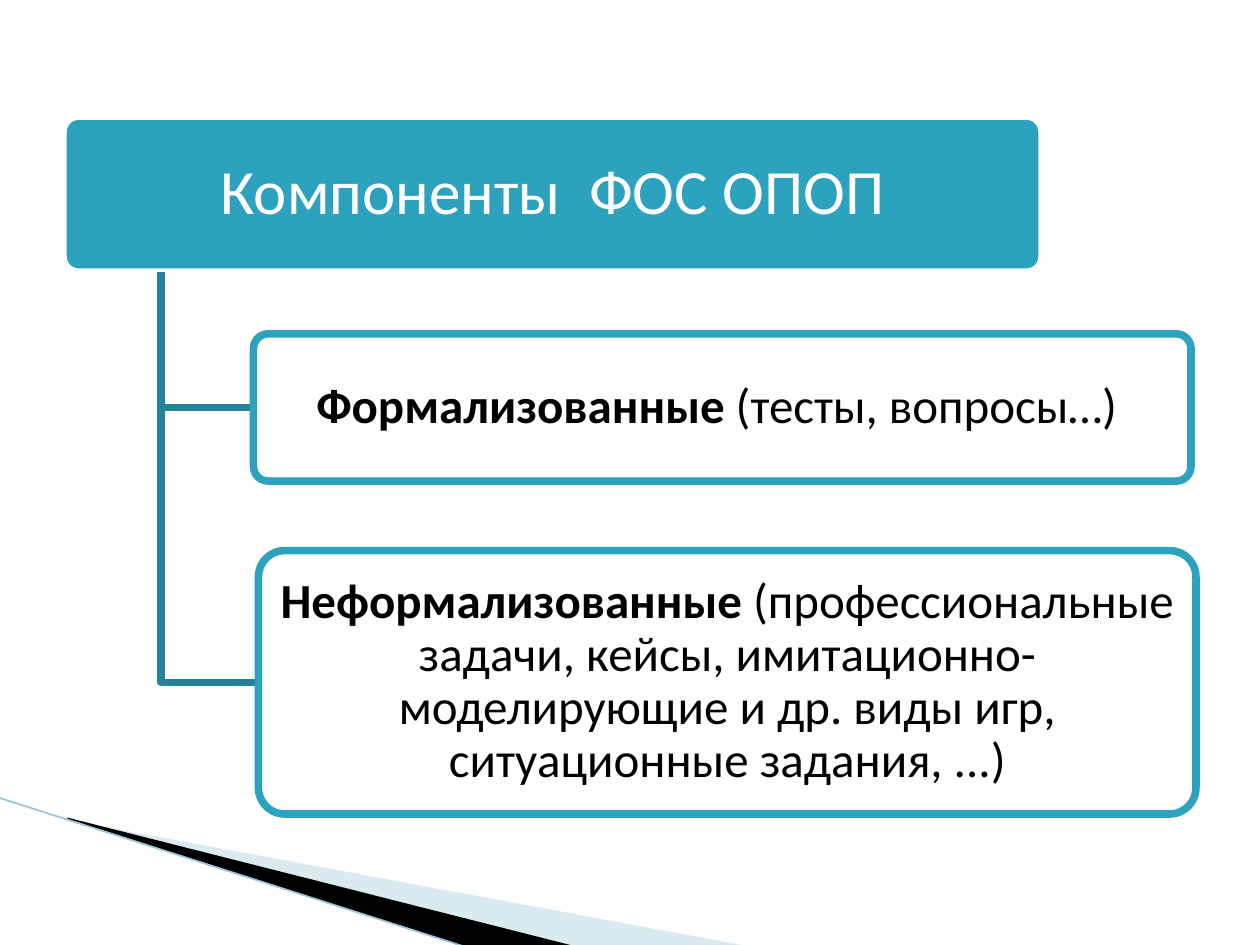
from pptx import Presentation
from pptx.dml.color import RGBColor
from pptx.enum.shapes import MSO_CONNECTOR, MSO_SHAPE
from pptx.enum.text import MSO_ANCHOR, MSO_AUTO_SIZE, PP_ALIGN
from pptx.oxml.ns import qn
from pptx.util import Cm, Pt
from lxml.etree import SubElement

FONT = "Calibri"
TEAL, DARK_TEAL, PALE_TEAL = "2DA2BF", "248299", "97C5D8"
LINE_WIDTH = 4.33


def color(value):
    return RGBColor.from_string(value)


def set_fill(sp, value, alpha=None):
    sp.fill.solid()
    sp.fill.fore_color.rgb = color(value)
    if alpha is not None:
        clr = sp.fill._xPr.find(qn("a:solidFill"))[0]
        SubElement(clr, qn("a:alpha")).set("val", str(alpha * 1000))


def set_line(sp, value, width):
    sp.line.color.rgb = color(value)
    sp.line.width = Pt(width)


def add_freeform(s, points, close):
    (x, y), *rest = [(Cm(px), Cm(py)) for px, py in points]
    builder = s.shapes.build_freeform(x, y)
    builder.add_line_segments(rest, close=close)
    sp = builder.convert_to_shape()
    sp.shadow.inherit = False
    return sp


def add_swoosh(s, left, top):
    """Decorative wedges in the lower left corner."""
    wedges = [
        ([(1.4, 0.54), (15.11, 3.08), (11.58, 3.08), (1.4, 0.51)], "A0CBDC", 40),
        ([(1.35, 0.48), (11.61, 3.08), (9.45, 3.1), (1.37, 0.51)], "000000", None),
    ]
    for points, fill, alpha in wedges:
        sp = add_freeform(s, [(left + x, top + y) for x, y in points], True)
        set_fill(sp, fill, alpha)
        sp.line.fill.background()
    edge = s.shapes.add_connector(MSO_CONNECTOR.STRAIGHT, Cm(left - 0.03), Cm(top + 0.08),
                                  Cm(left + 9.42), Cm(top + 3.1))
    set_line(edge, PALE_TEAL, 0.95)
    SubElement(edge._element.spPr, qn("a:effectLst"))


def add_box(s, left, top, width, height, fill, line):
    sp = s.shapes.add_shape(MSO_SHAPE.ROUNDED_RECTANGLE,
                            Cm(left), Cm(top), Cm(width), Cm(height))
    sp.adjustments[0] = 0.1
    sp.shadow.inherit = False
    set_fill(sp, fill)
    set_line(sp, line, LINE_WIDTH)
    return sp


def write_text(sp, runs, size, font_color, inset_x, inset_y):
    """Fill the shape with one centred paragraph of (text, bold) runs."""
    tf = sp.text_frame
    tf.word_wrap = True
    tf.auto_size = MSO_AUTO_SIZE.NONE
    tf.vertical_anchor = MSO_ANCHOR.MIDDLE
    tf.margin_left = tf.margin_right = Cm(inset_x)
    tf.margin_top = tf.margin_bottom = Cm(inset_y)
    p = tf.paragraphs[0]
    p.alignment = PP_ALIGN.CENTER
    p.line_spacing = 0.9
    p.space_before = Pt(0)
    for text, bold in runs:
        r = p.add_run()
        r.text = text
        r.font.name = FONT
        r.font.size = Pt(size)
        r.font.bold = bold
        r.font.color.rgb = color(font_color)


def add_header(s, left, top, width, height):
    add_box(s, left, top, width, height, TEAL, "FFFFFF")
    title = s.shapes.title
    pad = 0.1
    title.left, title.top = Cm(left + pad), Cm(top + pad)
    title.width, title.height = Cm(width - 2 * pad), Cm(height - 2 * pad)
    write_text(title, [("Компоненты  ФОС ОПОП", False)], 36, "FFFFFF", 0.18, 0.13)
    s.shapes._spTree.append(title._element)  # in front of its box


def add_branch(s, trunk_x, trunk_top, left, top, width, height, runs):
    """Box hanging from the trunk on an elbow line."""
    middle = top + height / 2
    elbow = add_freeform(s, [(trunk_x, trunk_top), (trunk_x, middle), (left, middle)], False)
    elbow.fill.background()
    set_line(elbow, DARK_TEAL, LINE_WIDTH)
    sp = add_box(s, left, top, width, height, "FFFFFF", TEAL)
    write_text(sp, runs, 28, "000000", 0.15, 0.1)


def add_hierarchy(s, left, top):
    width, height = 19.74, 3.15
    add_header(s, left, top, width, height)
    branches = [
        (3.84, 4.39, 2.97, [("Формализованные", True), (" (тесты, вопросы…) ", False)]),
        (3.94, 8.76, 5.31, [("Неформализованные", True),
                            (" (профессиональные задачи, кейсы, имитационно-моделирующие "
                             "и др. виды игр, ситуационные задания, ...)", False)]),
    ]
    for dx, dy, box_height, runs in branches:
        add_branch(s, left + width / 10, top + height, left + dx, top + dy,
                   18.9, box_height, runs)


def main():
    prs = Presentation()
    prs.slide_width, prs.slide_height = Cm(25.4), Cm(19.05)
    s = prs.slides.add_slide(prs.slide_layouts[5])
    add_swoosh(s, 0, 16)
    add_hierarchy(s, 1.27, 2.34)
    prs.save("out.pptx")


if __name__ == "__main__":
    main()
